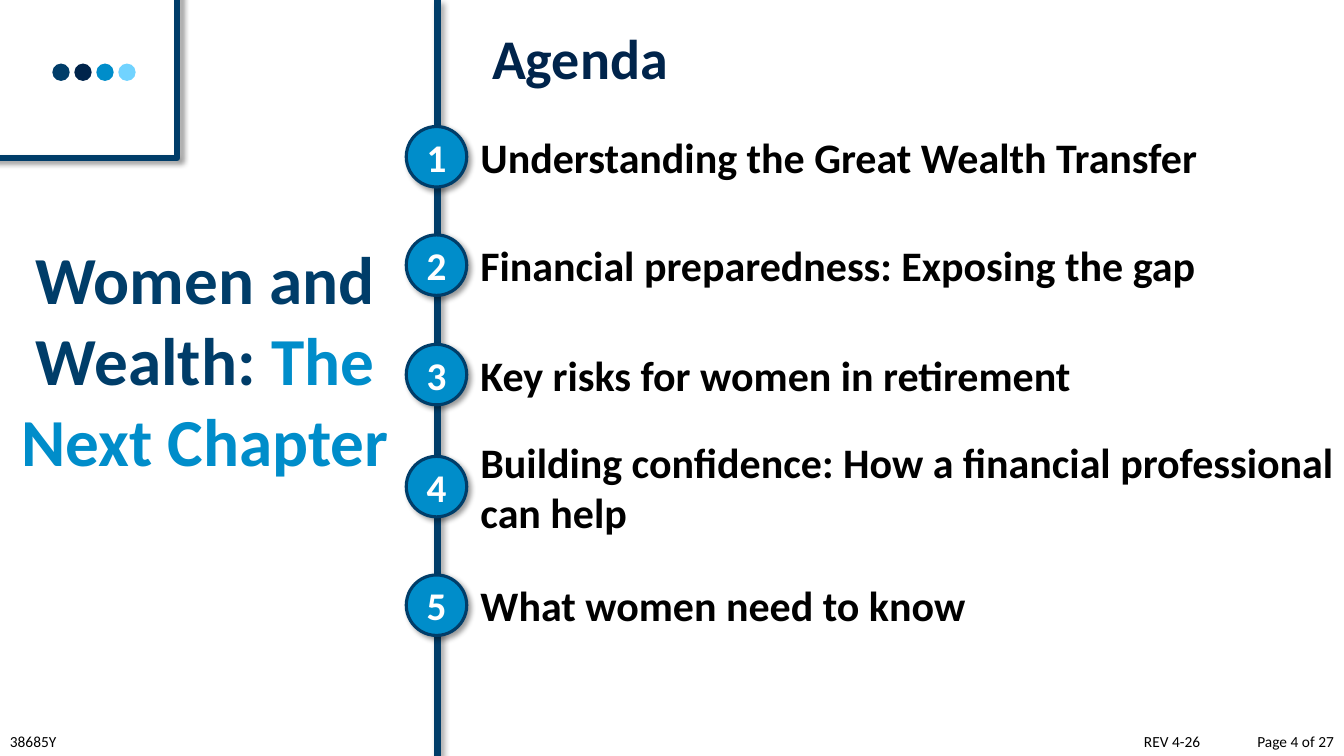
from lxml import etree
from pptx import Presentation
from pptx.dml.color import RGBColor
from pptx.enum.shapes import MSO_CONNECTOR, MSO_SHAPE
from pptx.enum.text import MSO_ANCHOR, PP_ALIGN
from pptx.oxml import parse_xml
from pptx.oxml.ns import nsdecls, qn
from pptx.util import Pt

RECTANGLE, OVAL = MSO_SHAPE.RECTANGLE, MSO_SHAPE.OVAL
STRAIGHT = MSO_CONNECTOR.STRAIGHT
TOP, MIDDLE = MSO_ANCHOR.TOP, MSO_ANCHOR.MIDDLE
LEFT, CENTER, RIGHT = PP_ALIGN.LEFT, PP_ALIGN.CENTER, PP_ALIGN.RIGHT

WIDTH, HEIGHT = 960, 540
FONT = "Calibri"
COLORS = {
    "navy": "003D69",
    "dark": "00244B",
    "blue": "008DCA",
    "sky": "71D3FF",
    "black": "000000",
    "white": "FFFFFF",
}
FORMATS = {
    "title": {"size": Pt(48), "bold": True},
    "heading": {"size": Pt(40), "bold": True},
    "item": {"size": Pt(30), "bold": True},
    "number": {"size": Pt(28), "bold": True},
    "footer": {"size": Pt(11), "bold": False},
}
# Agenda entries with the vertical centre of each row
AGENDA = [
    ("Understanding the Great Wealth Transfer", 112),
    ("Financial preparedness: Exposing the gap", 189.4),
    ("Key risks for women in retirement", 267.6),
    ("Building confidence: How a financial professional can help", 347.6),
    ("What women need to know", 432.3),
]


def color(name):
    return RGBColor.from_string(COLORS[name])


def set_shadow(shape, visible=True):
    """Give the shape its soft lower-right shadow, or none."""
    properties = shape._element.spPr
    for effects in properties.findall(qn("a:effectLst")):
        properties.remove(effects)
    effects = etree.SubElement(properties, qn("a:effectLst"))
    if visible:
        effects.append(parse_xml(
            f'<a:outerShdw {nsdecls("a")} blurRad="{Pt(4)}" dist="{Pt(3)}" '
            'dir="2700000" algn="tl" rotWithShape="0">'
            f'<a:srgbClr val="{COLORS["black"]}"><a:alpha val="40000"/></a:srgbClr>'
            '</a:outerShdw>'))


def write(shape, runs, style, align=LEFT, anchor=TOP, inset=(0, 0)):
    """Fill a shape with one paragraph of (text, colour) runs."""
    frame = shape.text_frame
    frame.word_wrap = True
    frame.vertical_anchor = anchor
    frame.margin_left = frame.margin_right = Pt(inset[0])
    frame.margin_top = frame.margin_bottom = Pt(inset[1])
    paragraph = frame.paragraphs[0]
    paragraph.alignment = align
    for text, color_name in runs:
        run = paragraph.add_run()
        run.text = text
        run.font.name = FONT
        run.font.color.rgb = color(color_name)
        for name, value in FORMATS[style].items():
            setattr(run.font, name, value)


def add_text(slide, box, runs, style, inset=(7.2, 3.6), **layout):
    shape = slide.shapes.add_textbox(*map(Pt, box))
    write(shape, runs, style, inset=inset, **layout)


def add_outlined(slide, kind, box, fill=None, line=None, shadow=False):
    shape = slide.shapes.add_shape(kind, *map(Pt, box))
    if fill:
        shape.fill.solid()
        shape.fill.fore_color.rgb = color(fill)
    else:
        shape.fill.background()
    if line:
        shape.line.color.rgb = color("navy")
        shape.line.width = Pt(line)
    else:
        shape.line.fill.background()
    set_shadow(shape, shadow)
    return shape


def add_corner(slide, left, top, width, height):
    """Framed corner with a row of four dots."""
    add_outlined(slide, RECTANGLE, (left, top, width, height), line=4.5, shadow=True)
    size, pitch = 12.4, 15.7
    for index, name in enumerate(("navy", "dark", "blue", "sky")):
        dot = (left + 54.7 + index * pitch, top + 56.2, size, size)
        add_outlined(slide, OVAL, dot, fill=name)


def add_title(slide, left, top, width, height):
    runs = [("Women and Wealth: ", "navy"), ("The Next Chapter", "blue")]
    add_text(slide, (left, top, width, height), runs, "title", align=CENTER)


def add_agenda(slide, left, top, width, height):
    """Heading and numbered entries along a vertical line."""
    axis, diameter = left + 21.8, 43.2
    line = slide.shapes.add_connector(
        STRAIGHT, Pt(axis + 0.7), Pt(top), Pt(axis + 0.7), Pt(top + height))
    line.line.color.rgb = color("navy")
    line.line.width = Pt(4.5)
    set_shadow(line)

    add_text(slide, (left + 54.4, top + 13, 491.8, 55.4),
             [("Agenda", "dark")], "heading")

    text_left, text_height = left + 53.2, 72
    for number, (entry, middle) in enumerate(AGENDA, 1):
        center = top + middle
        add_text(slide,
                 (text_left, center - text_height / 2, left + width - text_left, text_height),
                 [(entry, "black")], "item", inset=(0, 0), anchor=MIDDLE)
        circle = add_outlined(
            slide, OVAL,
            (axis - diameter / 2, center - diameter / 2, diameter, diameter),
            fill="blue", line=2.25, shadow=True)
        write(circle, [(str(number), "white")], "number", align=CENTER, anchor=MIDDLE)


def add_footer(slide, left, top, width, height):
    right = left + width
    parts = [
        ("38685Y", left, 136, LEFT),
        ("REV 4-26", right - 150, 73, LEFT),
        ("Page 4 of 27", right - 77, 77, RIGHT),
    ]
    for text, part_left, part_width, align in parts:
        add_text(slide, (part_left, top, part_width, height),
                 [(text, "black")], "footer", align=align)


def main():
    presentation = Presentation()
    presentation.slide_width, presentation.slide_height = Pt(WIDTH), Pt(HEIGHT)
    slide = presentation.slides.add_slide(presentation.slide_layouts[6])
    add_corner(slide, -17.3, -10.8, 144, 123.8)
    add_title(slide, 0.7, 166.3, 291.6, 181.4)
    add_agenda(slide, 290, 0, 668.3, HEIGHT)
    add_footer(slide, 0, 519.1, WIDTH, 20.9)
    presentation.save("out.pptx")


if __name__ == "__main__":
    main()
